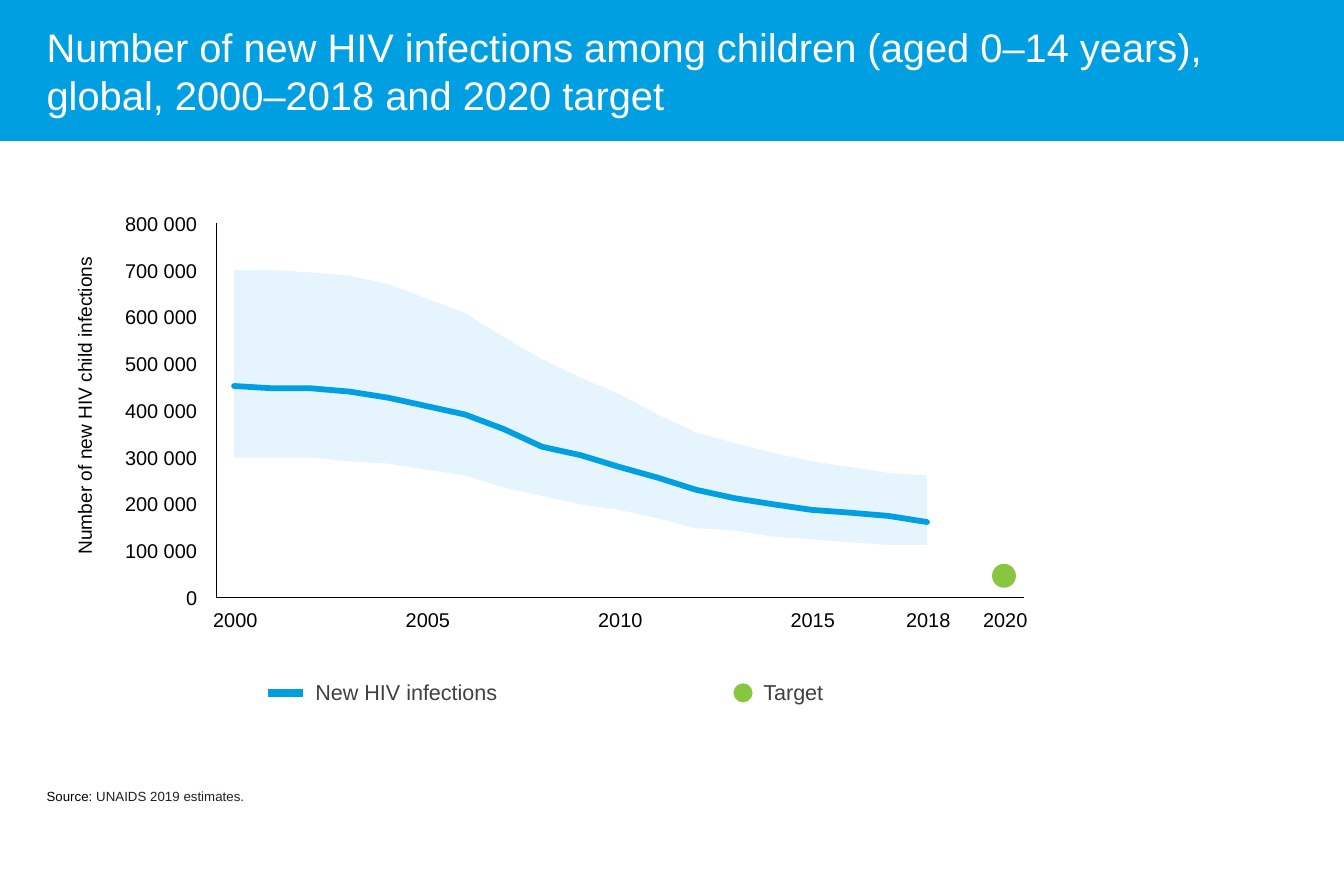
from dataclasses import dataclass

from lxml.etree import SubElement
from pptx import Presentation
from pptx.dml.color import RGBColor
from pptx.enum.shapes import MSO_CONNECTOR, MSO_SHAPE
from pptx.enum.text import MSO_ANCHOR as ANCHOR, MSO_AUTO_SIZE as AUTO, PP_ALIGN as ALIGN
from pptx.oxml.ns import qn
from pptx.util import Inches, Pt


@dataclass(frozen=True)
class Theme:
    font: str = "Arial"
    blue: str = "009FE2"
    band: str = "E5F4FD"
    green: str = "88C540"
    black: str = "000000"
    grey: str = "404040"
    source_ink: str = "231F20"
    white: str = "FFFFFF"
    title_size: float = 24
    legend_size: float = 13
    label_size: float = 12
    axis_title_size: float = 11.5
    source_size: float = 8


theme = Theme()


def write(frame, paragraphs, size, align=ALIGN.LEFT, insets=(0, 0, 0, 0), **formats):
    """Fill a frame with paragraphs, each a list of (text, colour) runs."""
    sides = ("margin_left", "margin_top", "margin_right", "margin_bottom")
    settings = dict(zip(sides, map(Inches, insets)), **formats)
    for name, value in settings.items():
        setattr(frame, name, value)
    for index, runs in enumerate(paragraphs):
        paragraph = frame.paragraphs[0] if index == 0 else frame.add_paragraph()
        paragraph.alignment = align
        for text, colour in runs:
            run = paragraph.add_run()
            run.text = text
            run.font.name = theme.font
            run.font.size = Pt(size)
            run.font.color.rgb = RGBColor.from_string(colour)


def paint(shape, colour):
    """Give a shape a flat fill with no outline or shadow."""
    shape.shadow.inherit = False
    shape.fill.solid()
    shape.fill.fore_color.rgb = RGBColor.from_string(colour)
    shape.line.fill.background()


deck = Presentation()
deck.slide_width, deck.slide_height = Inches(11.25), Inches(7.5)
slide = deck.slides.add_slide(deck.slide_layouts[6])
shapes = slide.shapes
label_format = {"auto_size": AUTO.SHAPE_TO_FIT_TEXT, "word_wrap": False}

# Estimates for 2000 to 2018, in thousands
median = [452, 447, 447, 440, 427, 409, 391, 360, 322, 304,
          279, 256, 230, 212, 199, 187, 181, 174, 161]
upper = [700, 700, 695, 688, 670, 639, 608, 557, 509, 470,
         435, 391, 353, 330, 309, 291, 279, 266, 261]
lower = [299, 299, 299, 291, 286, 273, 261, 235, 217, 199,
         187, 169, 148, 143, 130, 124, 118, 112, 112]
target = 46

# Plot scales, in inches
axis_left, axis_right, axis_top, axis_bottom = 1.81, 8.57, 1.87, 5
year_x = {year: 1.96 + (year - 2000) * 5.8 / 18 for year in range(2000, 2021)}
thousand = (axis_bottom - axis_top) / 800
median_points, upper_points, lower_points = (
    [(Inches(x), Inches(axis_bottom - value * thousand))
     for x, value in zip(year_x.values(), series)]
    for series in (median, upper, lower)
)

# Title banner
banner = shapes.add_shape(MSO_SHAPE.RECTANGLE, 0, 0, deck.slide_width, Inches(1.18))
paint(banner, theme.blue)
title = ["Number of new HIV infections among children (aged 0–14 years),",
         "global, 2000–2018 and 2020 target"]
write(banner.text_frame, [[(line, theme.white)] for line in title], theme.title_size,
      insets=(0.39, 0.05, 0.1, 0.05), vertical_anchor=ANCHOR.MIDDLE, word_wrap=True)

# Uncertainty band
outline = upper_points + lower_points[::-1]
band_builder = shapes.build_freeform(*outline[0])
band_builder.add_line_segments(outline[1:], close=True)
paint(band_builder.convert_to_shape(), theme.band)

# Axes and legend line
for x1, y1, x2, y2, colour, width in [
    (axis_left, axis_top, axis_left, axis_bottom, theme.black, 0.25),
    (axis_left, axis_bottom, axis_right, axis_bottom, theme.black, 0.25),
    (2.24, 5.8, 2.54, 5.8, theme.blue, 5),
]:
    rule = shapes.add_connector(MSO_CONNECTOR.STRAIGHT, *map(Inches, (x1, y1, x2, y2)))
    rule.line.color.rgb = RGBColor.from_string(colour)
    rule.line.width = Pt(width)
    SubElement(rule._element.spPr, qn("a:effectLst"))

# New infections line
trend_builder = shapes.build_freeform(*median_points[0])
trend_builder.add_line_segments(median_points[1:], close=False)
trend = trend_builder.convert_to_shape()
trend.shadow.inherit = False
trend.fill.background()
trend.line.color.rgb = RGBColor.from_string(theme.blue)
trend.line.width = Pt(3.5)
trend._element.spPr.find(qn("a:ln")).set("cap", "rnd")

# Target dots: plot and legend
for x, y, size in [(year_x[2020], axis_bottom - target * thousand, 0.2), (6.22, 5.8, 0.16)]:
    dot = shapes.add_shape(MSO_SHAPE.OVAL, Inches(x - size / 2), Inches(y - size / 2),
                           Inches(size), Inches(size))
    paint(dot, theme.green)

# Value labels
for value in range(0, 801, 100):
    width = 0.64 if value else 0.12
    y = axis_bottom - value * thousand
    value_label = shapes.add_textbox(Inches(1.65 - width), Inches(y - 0.1),
                                     Inches(width), Inches(0.2))
    write(value_label.text_frame, [[(f"{value} 000" if value else "0", theme.black)]],
          theme.label_size, ALIGN.RIGHT, **label_format)

# Year labels
for year in (2000, 2005, 2010, 2015, 2018, 2020):
    year_label = shapes.add_textbox(Inches(year_x[year] - 0.2), Inches(5.09),
                                    Inches(0.42), Inches(0.2))
    write(year_label.text_frame, [[(str(year), theme.black)]], theme.label_size,
          ALIGN.CENTER, vertical_anchor=ANCHOR.MIDDLE, **label_format)

# Value axis title
axis_title = shapes.add_textbox(Inches(0.56), Inches(2.13), Inches(0.4), Inches(2.61))
write(axis_title.text_frame, [[("Number of new HIV child infections", theme.black)]],
      theme.axis_title_size, insets=(0.1, 0.05, 0.1, 0.05), **label_format)
axis_title._element.txBody.find(qn("a:bodyPr")).set("vert", "vert270")

# Legend text
for text, left, width in [("New HIV infections", 2.64, 1.64), ("Target", 6.39, 0.61)]:
    legend = shapes.add_textbox(Inches(left), Inches(5.63), Inches(width), Inches(0.32))
    write(legend.text_frame, [[(text, theme.grey)]], theme.legend_size,
          insets=(0, 0.05, 0.1, 0.05), **label_format)

# Source
source = shapes.add_textbox(Inches(0.39), Inches(6.6), Inches(1.67), Inches(0.13))
write(source.text_frame,
      [[("Source: ", theme.black), ("UNAIDS 2019 estimates.", theme.source_ink)]],
      theme.source_size, **label_format)

deck.save("out.pptx")
